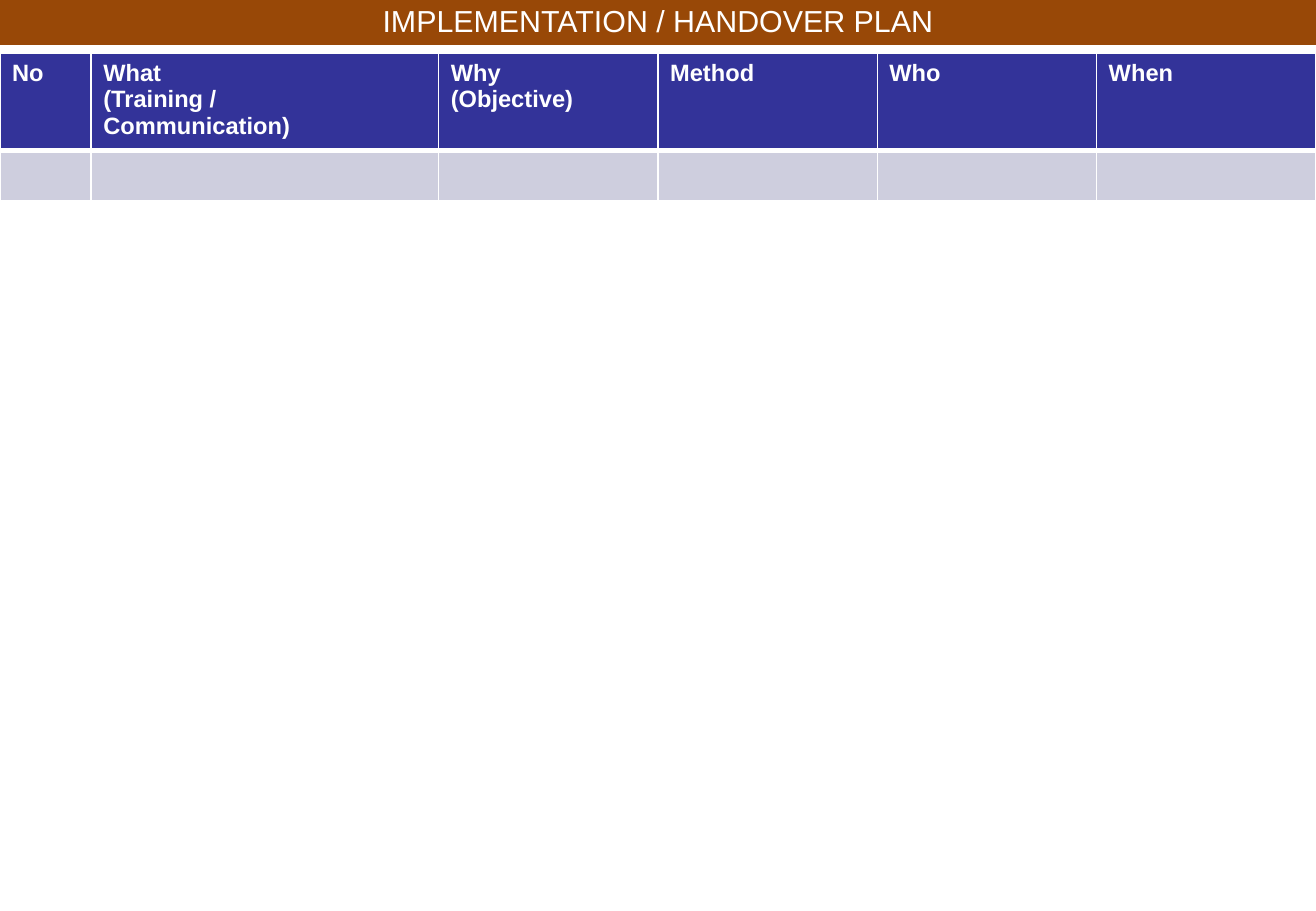
from dataclasses import dataclass

from lxml.etree import SubElement
from pptx import Presentation
from pptx.dml.color import RGBColor
from pptx.enum.text import MSO_ANCHOR, MSO_AUTO_SIZE, PP_ALIGN
from pptx.oxml.ns import qn
from pptx.slide import Slide
from pptx.table import _Cell
from pptx.text.text import TextFrame
from pptx.util import Inches, Pt

COLORS = {
    "banner": "984807",
    "header": "333399",
    "body": "CECEDE",
    "white": "FFFFFF",
}
FONT = "Arial"
SLIDE_WIDTH, SLIDE_HEIGHT = 10.83, 7.5
NUMBER_WIDTH, WHAT_WIDTH = 0.75, 2.86
OTHER_WIDTH = (SLIDE_WIDTH - NUMBER_WIDTH - WHAT_WIDTH) / 4
ROW_HEIGHTS = (0.8, 0.41)
TABLE_TOP = 0.44
THIN, THICK = 1, 3


@dataclass(frozen=True)
class Column:
    heading: str
    width: float = OTHER_WIDTH


COLUMNS = [
    Column("No", NUMBER_WIDTH),
    Column("What\n(Training /\nCommunication)", WHAT_WIDTH),
    Column("Why\n(Objective)"),
    Column("Method"),
    Column("Who"),
    Column("When"),
]


def write_text(frame: TextFrame, text: str, *, size: float, bold: bool = False,
               color: str = "white", align: PP_ALIGN = PP_ALIGN.LEFT) -> None:
    """Fill a text frame, one paragraph per line of text."""
    frame.text = text
    for paragraph in frame.paragraphs:
        paragraph.alignment = align
        for run in paragraph.runs:
            run.font.name = FONT
            run.font.size = Pt(size)
            run.font.bold = bold
            run.font.color.rgb = RGBColor.from_string(COLORS[color])


def style_cell(cell: _Cell, fill: str, *, top: float, bottom: float) -> None:
    """Draw white borders (widths in points) and a solid fill."""
    properties = cell._tc.get_or_add_tcPr()
    for side, width in (("L", THIN), ("R", THIN), ("T", top), ("B", bottom)):
        line = SubElement(properties, qn(f"a:ln{side}"), w=str(Pt(width)))
        solid = SubElement(line, qn("a:solidFill"))
        SubElement(solid, qn("a:srgbClr"), val=COLORS["white"])
    cell.fill.solid()
    cell.fill.fore_color.rgb = RGBColor.from_string(COLORS[fill])


def add_banner(slide: Slide, text: str) -> None:
    title = slide.shapes.title
    title.left, title.top = Inches(0), Inches(-0.03)
    title.width, title.height = Inches(SLIDE_WIDTH), Inches(0.4)
    title.fill.solid()
    title.fill.fore_color.rgb = RGBColor.from_string(COLORS["banner"])
    frame = title.text_frame
    frame.auto_size = MSO_AUTO_SIZE.NONE
    frame.vertical_anchor = MSO_ANCHOR.TOP
    frame.margin_left = frame.margin_right = Inches(0)
    frame.margin_top = frame.margin_bottom = Inches(0.05)
    write_text(frame, text, size=18, align=PP_ALIGN.CENTER)


def add_plan_table(slide: Slide, columns: list[Column]) -> None:
    table = slide.shapes.add_table(
        len(ROW_HEIGHTS), len(columns), Inches(0), Inches(TABLE_TOP),
        Inches(SLIDE_WIDTH), Inches(sum(ROW_HEIGHTS))).table
    for row, height in zip(table.rows, ROW_HEIGHTS):
        row.height = Inches(height)
    for index, column in enumerate(columns):
        table.columns[index].width = Inches(column.width)
        header, body = table.cell(0, index), table.cell(1, index)
        style_cell(header, "header", top=THIN, bottom=THICK)
        style_cell(body, "body", top=THICK, bottom=THIN)
        write_text(header.text_frame, column.heading, size=14, bold=True)


def main() -> None:
    presentation = Presentation()
    presentation.slide_width = Inches(SLIDE_WIDTH)
    presentation.slide_height = Inches(SLIDE_HEIGHT)
    # Title Only layout
    slide = presentation.slides.add_slide(presentation.slide_layouts[5])

    # Banner across the top
    add_banner(slide, "IMPLEMENTATION / HANDOVER PLAN")

    # Plan table with one blank row to fill in
    add_plan_table(slide, COLUMNS)

    presentation.save("out.pptx")


if __name__ == "__main__":
    main()
